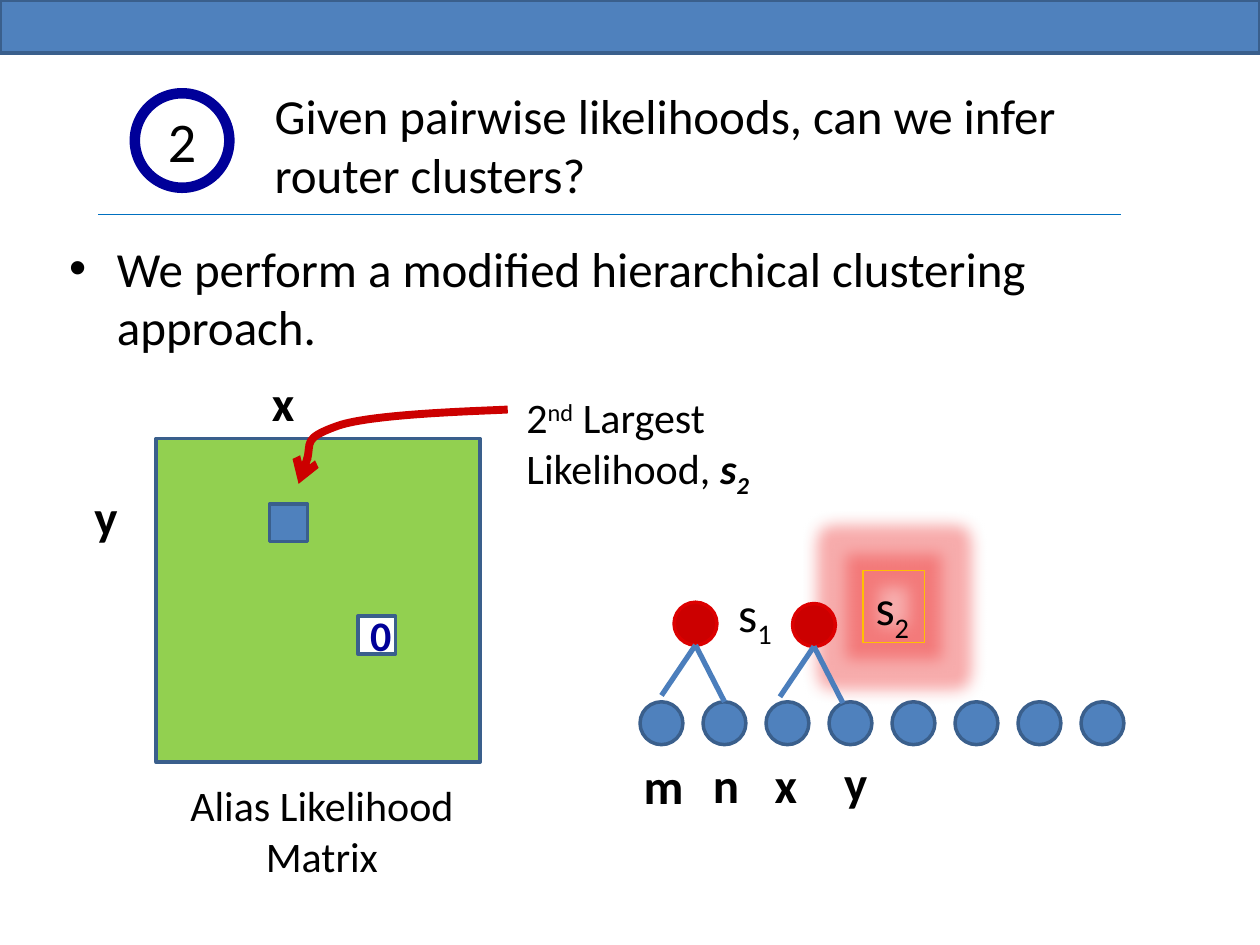
from lxml import etree
from pptx import Presentation
from pptx.dml.color import RGBColor
from pptx.enum.shapes import MSO_CONNECTOR, MSO_SHAPE
from pptx.enum.text import MSO_ANCHOR, MSO_AUTO_SIZE, PP_ALIGN
from pptx.oxml.ns import qn
from pptx.util import Inches, Pt

FONT = "Calibri"
COLORS = {
    "blue": "4F81BD", "outline": "3A5F8C", "branch": "4B7EBC", "rule": "0070C0",
    "navy": "000099", "green": "92D050", "red": "CC0000", "red_edge": "DC0000",
    "gold": "FFC000", "glow": "EE3030", "white": "FFFFFF", "black": "000000",
}
TITLE = "Given pairwise likelihoods, can we infer router clusters?"
APPROACH = "We perform a modified hierarchical clustering approach."
BOLD, SUB, SUPER = {"bold": True}, {"baseline": -25}, {"baseline": 30}
STRONG = {"bold": True, "italic": True}

# Box (left, top, width, height), runs, size, alignment
TEXTS = [
    ((1.35, 6.14, 2.41, 0.91), [("Alias Likelihood Matrix", {})], 24, PP_ALIGN.CENTER),
    ((4.08, 3.06, 2.06, 0.91),
     [("2", {}), ("nd", SUPER), (" Largest Likelihood, ", {}),
      ("s", STRONG), ("2", {**STRONG, **SUB})], 24, PP_ALIGN.LEFT),
    ((5.76, 4.58, 0.49, 0.57), [("s", {}), ("1", SUB)], 28, PP_ALIGN.LEFT),
]
LETTERS = [("y", 0.65, 3.81), ("x", 2.06, 2.91), ("m", 5.01, 5.95),
           ("n", 5.56, 5.94), ("x", 6.05, 5.94), ("y", 6.6, 5.92)]
NODE_COUNT, NODE_LEFT, NODE_TOP, NODE_STEP, NODE_SIZE = 8, 5.08, 5.57, 0.5, 0.34
MERGES = [(5.35, 4.78), (6.29, 4.79)]
BRANCH_ENDS = [(-0.27, 0.4), (0.23, 0.45)]
ARROW_CURVE = [(4.03, 3.25), (3.89, 3.26), (2.96, 3.28), (2.68, 3.38),
               (2.4, 3.48), (2.5, 3.55), (2.37, 3.84)]


def rgb(name):
    return RGBColor.from_string(COLORS[name])


def add_box(kind, box, fill, edge, width=2):
    shape = slide.shapes.add_shape(kind, *map(Inches, box))
    shape.shadow.inherit = False
    if fill:
        shape.fill.solid()
        shape.fill.fore_color.rgb = rgb(fill)
    else:
        shape.fill.background()
    shape.line.color.rgb = rgb(edge)
    shape.line.width = Pt(width)
    return shape


def write(frame, runs, size, align=PP_ALIGN.LEFT, anchor=MSO_ANCHOR.TOP, color="black"):
    """Fill a frame with one paragraph of (text, style) runs."""
    frame.word_wrap = True
    frame.auto_size = MSO_AUTO_SIZE.NONE
    frame.vertical_anchor = anchor
    paragraph = frame.paragraphs[0]
    paragraph.alignment = align
    for text, style in runs:
        run = paragraph.add_run()
        run.text = text
        run.font.name, run.font.size = FONT, Pt(size)
        run.font.color.rgb = rgb(color)
        run.font.bold = style.get("bold", False)
        run.font.italic = style.get("italic", False)
        if "baseline" in style:
            run._r.get_or_add_rPr().set("baseline", str(style["baseline"] * 1000))
    return paragraph


def add_text(box, runs, size, align=PP_ALIGN.LEFT):
    frame = slide.shapes.add_textbox(*map(Inches, box)).text_frame
    return write(frame, runs, size, align)


def add_line(start, end, color, width):
    line = slide.shapes.add_connector(MSO_CONNECTOR.STRAIGHT, *map(Inches, start + end))
    line.line.color.rgb = rgb(color)
    line.line.width = Pt(width)
    etree.SubElement(line._element.spPr, qn("a:effectLst"))


def add_curved_arrow(points, color, width):
    """Draw cubic curves through a start point and triples of control points."""
    start, *rest = [tuple(map(Inches, point)) for point in points]
    builder = slide.shapes.build_freeform(*start)
    builder.add_line_segments(rest, close=False)
    arrow = builder.convert_to_shape()
    arrow.shadow.inherit = False
    arrow.fill.background()
    arrow.line.color.rgb = rgb(color)
    arrow.line.width = Pt(width)
    etree.SubElement(arrow.line._get_or_add_ln(), qn("a:tailEnd"), type="arrow")
    outline = arrow._element.find(".//" + qn("a:path"))
    segments = outline.findall(qn("a:lnTo"))
    for i in range(0, len(segments), 3):
        curve = etree.SubElement(outline, qn("a:cubicBezTo"))
        for segment in segments[i:i + 3]:
            curve.append(segment[0])
            outline.remove(segment)


def add_glow(shape, color, radius, alpha):
    effects = shape._element.spPr.find(qn("a:effectLst"))
    glow = etree.SubElement(effects, qn("a:glow"), rad=str(Inches(radius)))
    tint = etree.SubElement(glow, qn("a:srgbClr"), val=COLORS[color])
    etree.SubElement(tint, qn("a:alpha"), val=str(alpha * 1000))


prs = Presentation()
prs.slide_width, prs.slide_height = Inches(10), Inches(7.5)
slide = prs.slides.add_slide(prs.slide_layouts[5])

# Heading
title = slide.shapes.title
title.left, title.top, title.width, title.height = map(Inches, (2.08, 0.63, 7.03, 1.04))
write(title.text_frame, [(TITLE, {})], 28)
add_box(MSO_SHAPE.RECTANGLE, (0, 0, 10, 0.42), "blue", "outline")
number = add_box(MSO_SHAPE.OVAL, (1.07, 0.74, 0.75, 0.75), "white", "navy", 6)
write(number.text_frame, [("2", {})], 32, PP_ALIGN.CENTER, MSO_ANCHOR.MIDDLE)
add_line((0.78, 1.7), (8.9, 1.7), "rule", 0.75)

approach = add_text((0.45, 1.84, 9, 1.1), [(APPROACH, {})], 28)
bullet = approach._p.get_or_add_pPr()
bullet.set("marL", str(Inches(0.38)))
bullet.set("indent", str(-Inches(0.38)))
before = etree.SubElement(bullet, qn("a:spcBef"))
etree.SubElement(before, qn("a:spcPct"), val="20000")
etree.SubElement(bullet, qn("a:buFont"), typeface="Arial")
etree.SubElement(bullet, qn("a:buChar"), char="•")

# Likelihood matrix
add_box(MSO_SHAPE.RECTANGLE, (1.24, 3.48, 2.57, 2.57), "green", "outline")
add_box(MSO_SHAPE.RECTANGLE, (2.14, 4, 0.3, 0.3), "blue", "outline")
zero = add_box(MSO_SHAPE.RECTANGLE, (2.84, 4.89, 0.3, 0.3), "white", "outline")
write(zero.text_frame, [("0", BOLD)], 24, PP_ALIGN.CENTER, MSO_ANCHOR.MIDDLE, "navy")
add_curved_arrow(ARROW_CURVE, "red", 4.5)

# Cluster tree
for i in range(NODE_COUNT):
    add_box(MSO_SHAPE.OVAL, (NODE_LEFT + i * NODE_STEP, NODE_TOP, NODE_SIZE, NODE_SIZE),
            "blue", "outline")

score = add_box(MSO_SHAPE.RECTANGLE, (6.85, 4.53, 0.49, 0.57), None, "gold", 0.75)
add_glow(score, "glow", 0.25, 40)
write(score.text_frame, [("s", {}), ("2", SUB)], 28)
score.text_frame.word_wrap = False

for left, top in MERGES:
    add_box(MSO_SHAPE.OVAL, (left, top, NODE_SIZE, NODE_SIZE), "red", "red_edge")
    joint = (left + NODE_SIZE / 2, top + NODE_SIZE)
    for dx, dy in BRANCH_ENDS:
        add_line(joint, (joint[0] + dx, joint[1] + dy), "branch", 3)

for box, runs, size, align in TEXTS:
    add_text(box, runs, size, align)
for letter, left, top in LETTERS:
    add_text((left, top, 0.48, 0.57), [(letter, BOLD)], 28)

prs.save("out.pptx")
